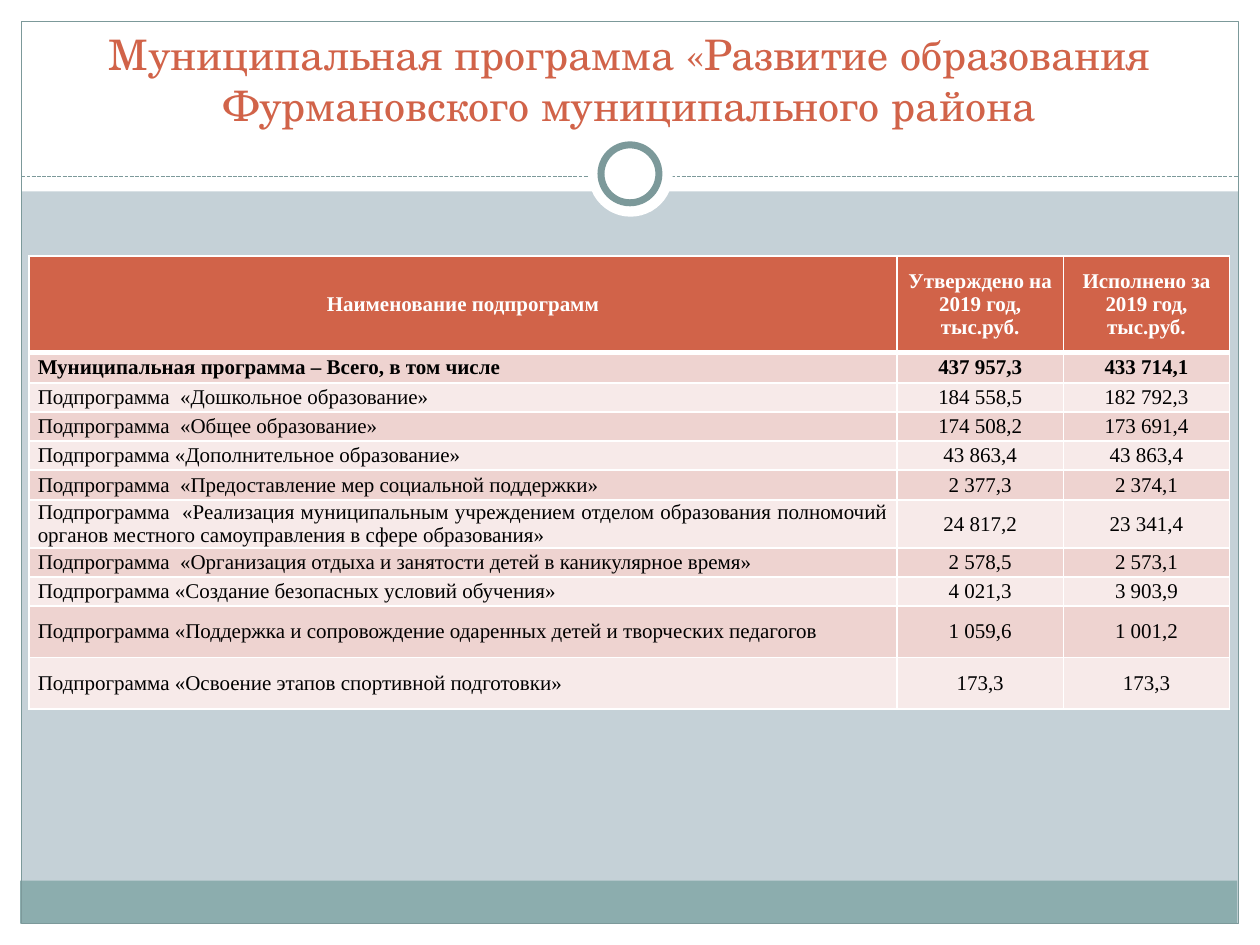
"""Builds a slide with the budget table of a municipal education programme."""
from lxml import etree
from pptx import Presentation
from pptx.dml.color import RGBColor
from pptx.enum.dml import MSO_LINE
from pptx.enum.shapes import MSO_CONNECTOR, MSO_SHAPE
from pptx.enum.text import MSO_ANCHOR, PP_ALIGN
from pptx.oxml.ns import qn
from pptx.util import Inches, Pt

RECT, OVAL = MSO_SHAPE.RECTANGLE, MSO_SHAPE.OVAL
CENTER, JUSTIFY = PP_ALIGN.CENTER, PP_ALIGN.JUSTIFY
MIDDLE, BOTTOM = MSO_ANCHOR.MIDDLE, MSO_ANCHOR.BOTTOM
STRAIGHT, SYS_DASH = MSO_CONNECTOR.STRAIGHT, MSO_LINE.SQUARE_DOT
TITLE_ONLY = 5

COLORS = {
    "background": "C5D1D7", "white": "FFFFFF", "black": "000000",
    "accent": "D16349", "footer": "8CADAE", "frame": "7C999A",
    "odd": "EED3D0", "even": "F7EAE9",
}
TITLE_FONT, TABLE_FONT = "TeX Gyre Schola", "Times New Roman"

TITLE = "Муниципальная программа «Развитие образования Фурмановского муниципального района"
ROWS = [
    ("Наименование подпрограмм", "Утверждено на 2019 год, тыс.руб.", "Исполнено за 2019 год, тыс.руб."),
    ("Муниципальная программа – Всего, в том числе", "437 957,3", "433 714,1"),
    ("Подпрограмма  «Дошкольное образование»", "184 558,5", "182 792,3"),
    ("Подпрограмма  «Общее образование»", "174 508,2", "173 691,4"),
    ("Подпрограмма «Дополнительное образование»", "43 863,4", "43 863,4"),
    ("Подпрограмма  «Предоставление мер социальной поддержки»", "2 377,3", "2 374,1"),
    ("Подпрограмма  «Реализация муниципальным учреждением отделом образования полномочий "
     "органов местного самоуправления в сфере образования»", "24 817,2", "23 341,4"),
    ("Подпрограмма  «Организация отдыха и занятости детей в каникулярное время»", "2 578,5", "2 573,1"),
    ("Подпрограмма «Создание безопасных условий обучения»", "4 021,3", "3 903,9"),
    ("Подпрограмма «Поддержка и сопровождение одаренных детей и творческих педагогов", "1 059,6", "1 001,2"),
    ("Подпрограмма «Освоение этапов спортивной подготовки»", "173,3", "173,3"),
]
COL_WIDTHS = [6.89, 1.32, 1.32]
ROW_HEIGHTS = [0.77, 0.24, 0.23, 0.23, 0.23, 0.24, 0.38, 0.23, 0.23, 0.41, 0.41]


def rgb(name):
    return RGBColor.from_string(COLORS[name])


def set_text(tf, text, font=TABLE_FONT, size=12, color="black", bold=False, align=CENTER):
    p = tf.paragraphs[0]
    p.alignment = align
    r = p.add_run()
    r.text = text
    r.font.name, r.font.size, r.font.bold = font, Pt(size), bold
    r.font.color.rgb = rgb(color)


def add_shape(s, kind, box, fill=None, line=None, width=0.75):
    sp = s.shapes.add_shape(kind, *map(Inches, box))
    sp.shadow.inherit = False
    if fill:
        sp.fill.solid()
        sp.fill.fore_color.rgb = rgb(fill)
    else:
        sp.fill.background()
    if line:
        sp.line.color.rgb = rgb(line)
        sp.line.width = Pt(width)
    else:
        sp.line.fill.background()


def add_dashed_line(s, x1, x2, y):
    line = s.shapes.add_connector(STRAIGHT, Inches(x1), Inches(y), Inches(x2), Inches(y))
    line.line.color.rgb = rgb("frame")
    line.line.width = Pt(0.75)
    line.line.dash_style = SYS_DASH
    etree.SubElement(line._element.spPr, qn("a:effectLst"))


def add_background(s):
    s.background.fill.solid()
    s.background.fill.fore_color.rgb = rgb("background")
    for box in [(0, 7.33, 10, 0.17), (0, 0, 10, 1.52), (0, 0, 0.17, 7.5), (9.83, 0, 0.17, 7.5)]:
        add_shape(s, RECT, box, "white")
    add_shape(s, RECT, (0.16, 6.99, 9.66, 0.34), "footer")
    add_shape(s, RECT, (0.17, 0.17, 9.66, 7.16), line="frame")
    add_dashed_line(s, 0.17, 9.83, 1.4)
    add_shape(s, OVAL, (4.67, 1.05, 0.67, 0.67), "white")
    add_shape(s, OVAL, (4.77, 1.15, 0.46, 0.46), "white", "frame", 4)


def add_title(s):
    title = s.shapes.title
    s.shapes._spTree.append(title._element)
    title.left, title.top, title.width, title.height = map(Inches, (0.33, 0.25, 9.33, 0.83))
    tf = title.text_frame
    tf.word_wrap = True
    tf.vertical_anchor = BOTTOM
    set_text(tf, TITLE, TITLE_FONT, 24, "accent")


def set_borders(cell, top, bottom):
    tc_pr = cell._tc.get_or_add_tcPr()
    for i, (side, width) in enumerate([("L", 1), ("R", 1), ("T", top), ("B", bottom)]):
        ln = etree.Element(qn(f"a:ln{side}"), w=str(Pt(width)))
        fill = etree.SubElement(ln, qn("a:solidFill"))
        etree.SubElement(fill, qn("a:srgbClr"), val=COLORS["white"])
        tc_pr.insert(i, ln)


def format_cell(cell, text, row, col):
    header = row == 0
    cell.fill.solid()
    cell.fill.fore_color.rgb = rgb("accent" if header else "odd" if row % 2 else "even")
    cell.vertical_anchor = MIDDLE
    cell.margin_left = cell.margin_right = Inches(0.07)
    cell.margin_top = cell.margin_bottom = 0
    set_borders(cell, top=3 if row == 1 else 1, bottom=3 if header else 1)
    set_text(cell.text_frame, text, color="white" if header else "black", bold=row < 2,
             align=CENTER if header or col else JUSTIFY)


def add_budget_table(s):
    size = sum(COL_WIDTHS), sum(ROW_HEIGHTS)
    table = s.shapes.add_table(len(ROWS), len(COL_WIDTHS), *map(Inches, (0.23, 2.03, *size))).table
    for column, width in zip(table.columns, COL_WIDTHS):
        column.width = Inches(width)
    for i, (texts, height) in enumerate(zip(ROWS, ROW_HEIGHTS)):
        table.rows[i].height = Inches(height)
        for j, text in enumerate(texts):
            format_cell(table.cell(i, j), text, i, j)


def main():
    prs = Presentation()
    prs.slide_width, prs.slide_height = Inches(10), Inches(7.5)
    s = prs.slides.add_slide(prs.slide_layouts[TITLE_ONLY])
    add_background(s)
    add_title(s)
    add_budget_table(s)
    prs.save("out.pptx")


if __name__ == "__main__":
    main()
